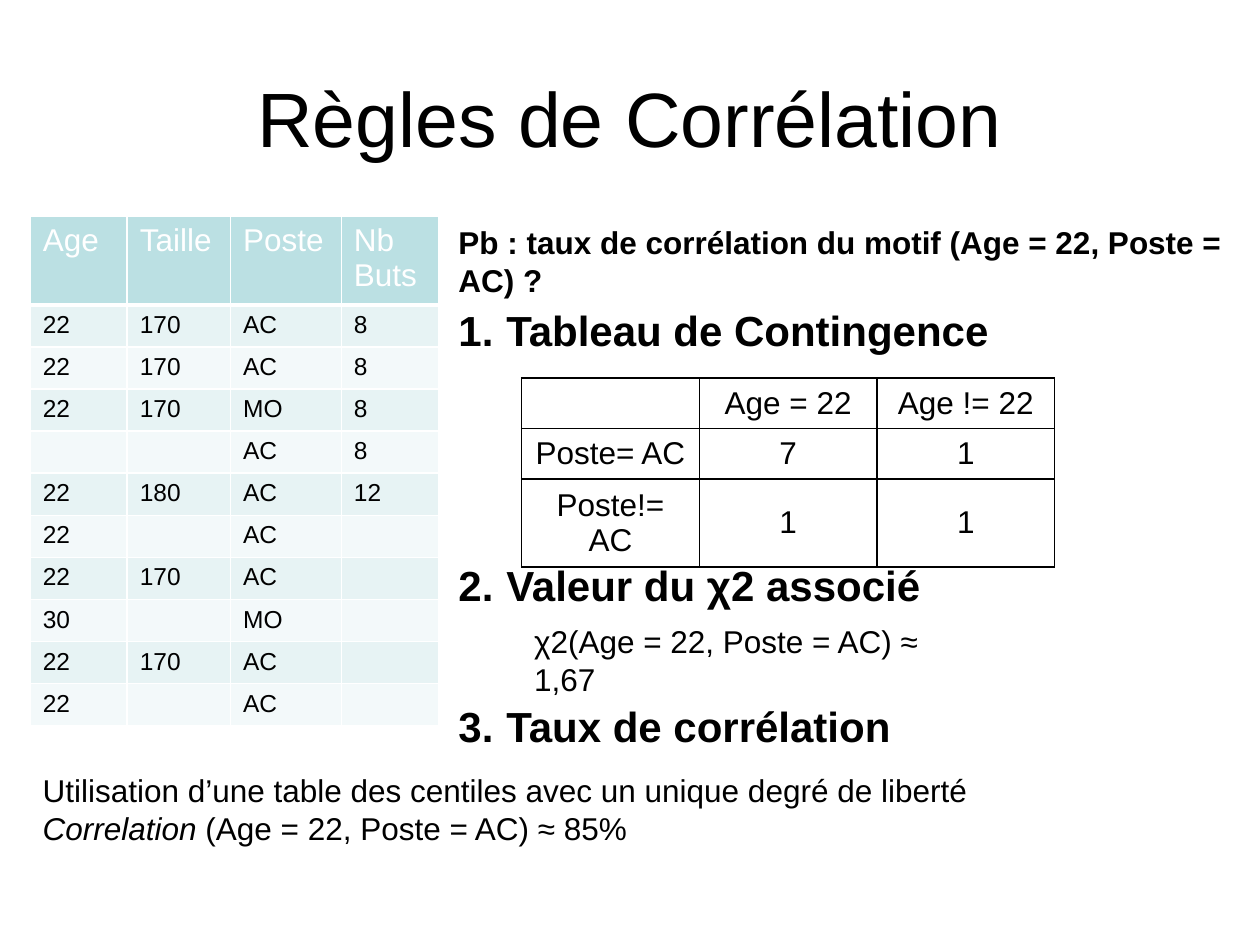
from lxml import etree
from pptx import Presentation
from pptx.dml.color import RGBColor
from pptx.enum.text import MSO_ANCHOR, PP_ALIGN
from pptx.oxml.ns import qn
from pptx.util import Emu, Pt

PX = 9144  # 100 px to the inch
MID, TOP = MSO_ANCHOR.MIDDLE, MSO_ANCHOR.TOP
LEFT, CENTER = PP_ALIGN.LEFT, PP_ALIGN.CENTER
BLACK, WHITE = "000000", "FFFFFF"
HEAD, BANDS = "BBE0E3", ("E7F3F4", "F3F9FA")

PLAYERS = [
    ("Age", "Taille", "Poste", "Nb Buts"),
    ("22", "170", "AC", "8"),
    ("22", "170", "AC", "8"),
    ("22", "170", "MO", "8"),
    ("", "", "AC", "8"),
    ("22", "180", "AC", "12"),
    ("22", "", "AC", ""),
    ("22", "170", "AC", ""),
    ("30", "", "MO", ""),
    ("22", "170", "AC", ""),
    ("22", "", "AC", ""),
]
COUNTS = [
    ("", "Age = 22", "Age != 22"),
    ("Poste= AC", "7", "1"),
    ("Poste!= AC", "1", "1"),
]
STEPS = [
    ("Tableau de Contingence", (354, 237, 611, 91)),
    ("Valeur du χ2 associé", (354, 439, 556, 91)),
    ("Taux de corrélation", (354, 551, 483, 81)),
]


def px(n):
    return Emu(n * PX)


def rgb(code):
    return RGBColor.from_string(code)


def add_run(para, text, size, color=BLACK, **more):
    run = para.add_run()
    run.text = text
    for key, value in {"name": "Arial", "size": Pt(size), **more}.items():
        setattr(run.font, key, value)
    run.font.color.rgb = rgb(color)


def add_text(slide, box, text, size, align=LEFT, anchor=TOP, **more):
    """Place a wrapped text box and return its paragraph."""
    frame = slide.shapes.add_textbox(*map(px, box)).text_frame
    frame.word_wrap = True
    frame.vertical_anchor = anchor
    para = frame.paragraphs[0]
    para.alignment = align
    if text:
        add_run(para, text, size, **more)
    return para


def add_step(slide, box, text, num):
    """Place a heading with an automatic number."""
    para = add_text(slide, box, text, 24, bold=True)
    props = para._p.get_or_add_pPr()
    props.set("marL", str(px(38)))
    props.set("indent", str(px(-38)))
    etree.SubElement(props, qn("a:buFont"), typeface="+mj-lt")
    etree.SubElement(props, qn("a:buAutoNum"), type="arabicPeriod", startAt=str(num))


def set_edges(cell, color, widths):
    """Draw the left, right, top and bottom edges, widths in points."""
    props = cell._tc.get_or_add_tcPr()
    for side, width in zip("LRTB", widths):
        line = etree.SubElement(props, qn("a:ln" + side), w=str(Pt(width)))
        fill = etree.SubElement(line, qn("a:solidFill"))
        etree.SubElement(fill, qn("a:srgbClr"), val=color)


def set_cell(cell, text, size, color, align, anchor):
    cell.vertical_anchor = anchor
    para = cell.text_frame.paragraphs[0]
    para.alignment = align
    if text:
        add_run(para, text, size, color)
    else:
        etree.SubElement(para._p, qn("a:endParaRPr"), sz=str(size * 100))


def add_grid(slide, spot, data, cols, rows):
    """Place an unstyled table and return it."""
    box = (*spot, sum(cols), sum(rows))
    grid = slide.shapes.add_table(len(rows), len(cols), *map(px, box)).table
    grid.first_row = grid.horz_banding = False
    for col, width in zip(grid.columns, cols):
        col.width = px(width)
    for row, height in zip(grid.rows, rows):
        row.height = px(height)
    return grid


def add_players(slide, spot):
    grid = add_grid(slide, spot, PLAYERS, [77, 82, 88, 77], [66] + [32] * 10)
    for r, row in enumerate(PLAYERS):
        size, color, fill = (14, BLACK, BANDS[(r - 1) % 2]) if r else (18, WHITE, HEAD)
        widths = (1, 1, 3 if r == 1 else 1, 1 if r else 3)
        for c, text in enumerate(row):
            cell = grid.cell(r, c)
            set_cell(cell, text, size, color, LEFT, TOP)
            set_edges(cell, WHITE, widths)
            cell.fill.solid()
            cell.fill.fore_color.rgb = rgb(fill)


def add_counts(slide, spot):
    grid = add_grid(slide, spot, COUNTS, [141] * 3, [40, 40, 70])
    for r, row in enumerate(COUNTS):
        for c, text in enumerate(row):
            cell = grid.cell(r, c)
            set_cell(cell, text, 18, BLACK, CENTER, MID)
            set_edges(cell, BLACK, (1, 1, 1, 1))
            cell.fill.background()


def add_result(slide, box):
    para = add_text(slide, box, "Utilisation d’une table des centiles avec un unique degré de liberté", 18)
    para.add_line_break()
    add_run(para, "Correlation", 18, italic=True)
    add_run(para, " (Age = 22, Poste = AC) ≈ 85%", 18)


def main():
    deck = Presentation()
    deck.slide_width, deck.slide_height = px(1000), px(750)
    slide = deck.slides.add_slide(deck.slide_layouts[6])
    add_text(slide, (50, 30, 900, 125), "Règles de Corrélation", 44, CENTER, MID)
    add_players(slide, (24, 172))
    add_text(slide, (354, 172, 628, 40),
             "Pb : taux de corrélation du motif (Age = 22, Poste = AC) ?", 18, bold=True)
    for num, (text, box) in enumerate(STEPS, 1):
        add_step(slide, box, text, num)
    add_text(slide, (414, 489, 378, 40), "χ2(Age = 22, Poste = AC) ≈ 1,67", 18)
    add_result(slide, (24, 607, 886, 71))
    add_counts(slide, (414, 300))
    deck.save("out.pptx")


if __name__ == "__main__":
    main()
